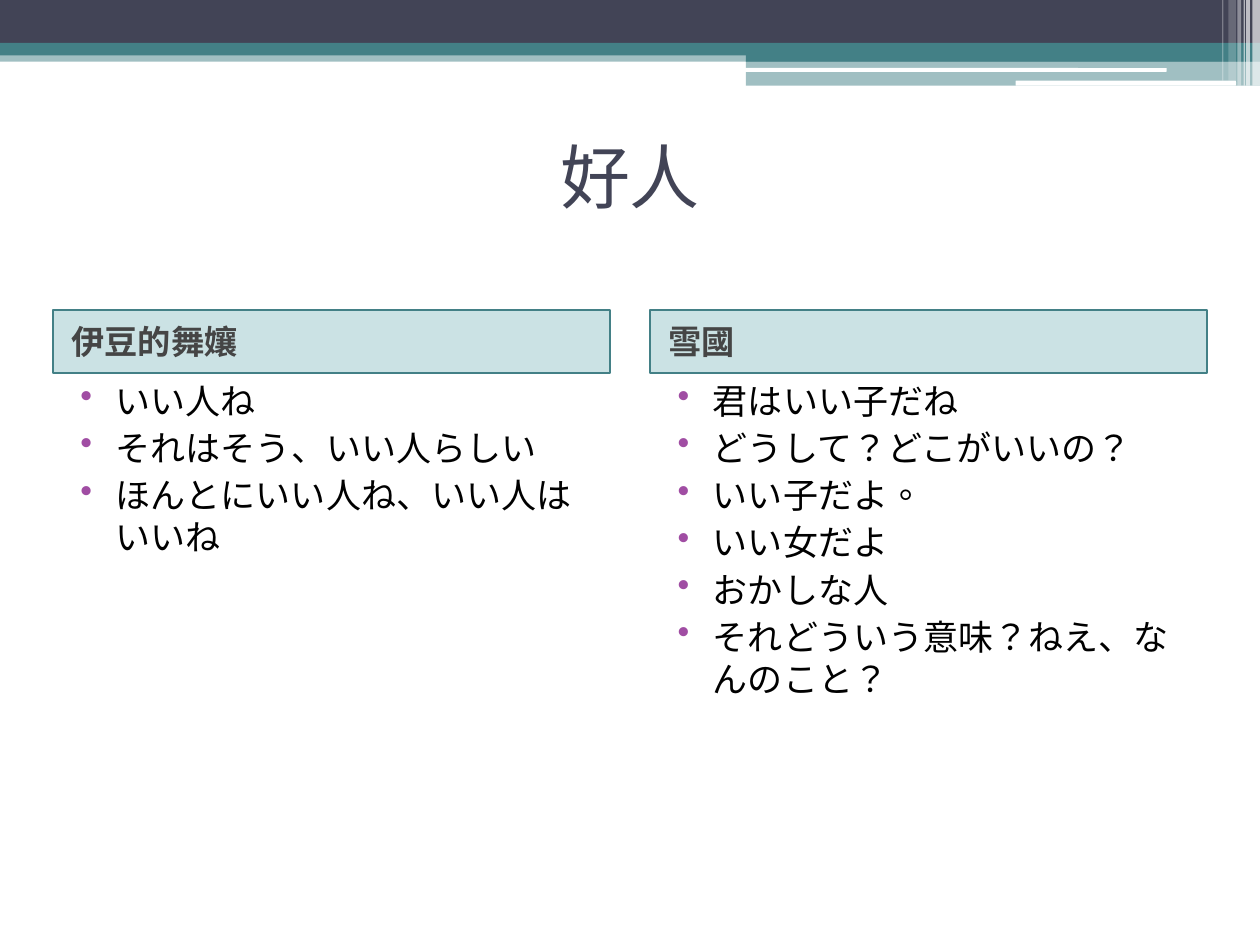
from dataclasses import dataclass

from lxml.etree import SubElement
from pptx import Presentation
from pptx.dml.color import RGBColor
from pptx.enum.shapes import MSO_SHAPE as Shape
from pptx.enum.text import MSO_ANCHOR as Anchor, PP_ALIGN as Align
from pptx.oxml.ns import qn
from pptx.util import Inches, Pt

COLUMNS, ROWS, CELL = 100, 75, 0.1
JAPANESE, CHINESE = "ja-JP", "zh-TW"


@dataclass(frozen=True)
class Theme:
    """Colours, fonts and type sizes of the slide."""
    navy: str = "424456"
    teal: str = "438086"
    tint: str = "328E97"
    white: str = "FFFFFF"
    black: str = "000000"
    grey: str = "454545"
    purple: str = "A04DA3"
    title_font: str = "Lato"
    body_font: str = "TeX Gyre Schola"
    title_size: float = 40
    heading_size: float = 19
    body_size: float = 20


@dataclass(frozen=True)
class Box:
    """An area measured in grid columns and rows."""
    left: float
    top: float
    width: float
    height: float

    def inner(self, left, top, width, height):
        """Return a box placed relative to this one."""
        return Box(self.left + left, self.top + top, width, height)

    def lengths(self):
        """Return left, top, width and height as slide lengths."""
        return [Inches(round(value * CELL, 3))
                for value in (self.left, self.top, self.width, self.height)]


THEME = Theme()


def add_panel(slide, box, color, opacity=100, line=None, kind=Shape.RECTANGLE):
    """Add a filled shape, optionally translucent or outlined."""
    shape = slide.shapes.add_shape(kind, *box.lengths())
    shape.shadow.inherit = False
    shape.fill.solid()
    shape.fill.fore_color.rgb = RGBColor.from_string(color)
    if opacity < 100:
        fill_color = shape._element.spPr.find(qn("a:solidFill"))[0]
        SubElement(fill_color, qn("a:alpha"), val=str(opacity * 1000))
    if line:
        shape.line.color.rgb = RGBColor.from_string(line)
        shape.line.width = Pt(1)
    else:
        shape.line.fill.background()
    return shape


def add_text(paragraph, text, *, size, font, color, bold=False,
             language=JAPANESE):
    """Add a formatted run whose East Asian font matches its Latin font."""
    run = paragraph.add_run()
    run.text = text
    run.font.size = Pt(size)
    run.font.name = font
    run.font.bold = bold
    run.font.color.rgb = RGBColor.from_string(color)
    properties = run._r.get_or_add_rPr()
    properties.set("lang", language)
    SubElement(properties, qn("a:ea"), typeface=font)


def set_indent(paragraph, margin, hanging=0, bullet_color=None):
    """Set the indents, the space before and an optional bullet."""
    paragraph.space_before = Pt(3)
    properties = paragraph._p.get_or_add_pPr()
    properties.set("marL", str(Inches(margin)))
    properties.set("indent", str(-Inches(hanging)))
    if bullet_color:
        color = SubElement(properties, qn("a:buClr"))
        SubElement(color, qn("a:srgbClr"), val=bullet_color)
        SubElement(properties, qn("a:buChar"), char="•")


def add_banner(slide, box):
    """Draw the coloured bands, white rules and edge stripes."""
    step = 59.2
    bands = [
        (0, 4, box.width, 0.9, THEME.teal, 50),
        (0, 0, box.width, 3.4, THEME.navy, 100),
        (0, 3.4, box.width, 1, THEME.teal, 100),
        (step, 3.9, box.width - step, 1, THEME.teal, 100),
        (step, 4.8, box.width - step, 2, THEME.teal, 50),
    ]
    for *place, color, opacity in bands:
        add_panel(slide, box.inner(*place), color, opacity)
    for place in ((59.1, 5.4, 33.5, 0.3), (80.6, 6.4, 17.5, 0.4)):
        add_panel(slide, box.inner(*place), THEME.white,
                  kind=Shape.ROUNDED_RECTANGLE)
    stripes = [(99.4, 0.6, 6.8, 65), (98.9, 0.3, 6.8, 65),
               (98.7, 0.1, 6.8, 60), (98.2, 0.3, 6.8, 40),
               (97.5, 0.6, 6.4, 20), (97, 0.1, 6.4, 30)]
    for left, width, height, opacity in stripes:
        add_panel(slide, box.inner(left, 0, width, height),
                  THEME.white, opacity)


def add_title(slide, box, text):
    """Place the centred slide title."""
    frame = slide.shapes.add_textbox(*box.lengths()).text_frame
    frame.word_wrap = True
    frame.vertical_anchor = Anchor.MIDDLE
    paragraph = frame.paragraphs[0]
    paragraph.alignment = Align.CENTER
    add_text(paragraph, text, size=THEME.title_size, font=THEME.title_font,
             color=THEME.navy, language=CHINESE)


def add_quote_column(slide, box, heading, quotes):
    """Place a work's heading above its bulleted quotes."""
    heading_height = 5
    shape = add_panel(slide, box.inner(0, 0, box.width, heading_height),
                      THEME.tint, 25, THEME.teal)
    frame = shape.text_frame
    frame.word_wrap = True
    frame.vertical_anchor = Anchor.MIDDLE
    paragraph = frame.paragraphs[0]
    paragraph.alignment = Align.LEFT
    set_indent(paragraph, 0.05)
    add_text(paragraph, heading, size=THEME.heading_size, bold=True,
             font=THEME.body_font, color=THEME.grey, language=CHINESE)

    body = box.inner(0, heading_height, box.width, box.height - heading_height)
    frame = slide.shapes.add_textbox(*body.lengths()).text_frame
    frame.word_wrap = True
    for index, segments in enumerate(quotes):
        paragraph = frame.add_paragraph() if index else frame.paragraphs[0]
        set_indent(paragraph, 0.4, 0.28, THEME.purple)
        for position, segment in enumerate(segments):
            add_text(paragraph, segment, size=THEME.body_size,
                     font=THEME.body_font, color=THEME.black,
                     language=CHINESE if position % 2 else JAPANESE)


def main():
    """Build and save the comparison slide."""
    presentation = Presentation()
    presentation.slide_width = Inches(COLUMNS * CELL)
    presentation.slide_height = Inches(ROWS * CELL)
    slide = presentation.slides.add_slide(presentation.slide_layouts[6])

    margin, column_width = 4.2, 44.2
    content_width = COLUMNS - 2 * margin
    add_banner(slide, Box(0, 0, COLUMNS, 6.8))
    add_title(slide, Box(margin, 9.2, content_width, 9.4), "好人")
    works = [
        ("伊豆的舞孃", [
            ("いい人ね",),
            ("それはそう", "、", "いい人らしい"),
            ("ほんとにいい人ね、いい人はいいね",),
        ]),
        ("雪國", [
            ("君はいい子だね",),
            ("どうして？どこがいいの？",),
            ("いい子だよ", "。"),
            ("いい女だよ",),
            ("おかしな人",),
            ("それどういう意味？ねえ、なんのこと？",),
        ]),
    ]
    for index, (heading, quotes) in enumerate(works):
        left = margin + index * (content_width - column_width)
        add_quote_column(slide, Box(left, 24.6, column_width, 47.5),
                         heading, quotes)
    presentation.save("out.pptx")


if __name__ == "__main__":
    main()
